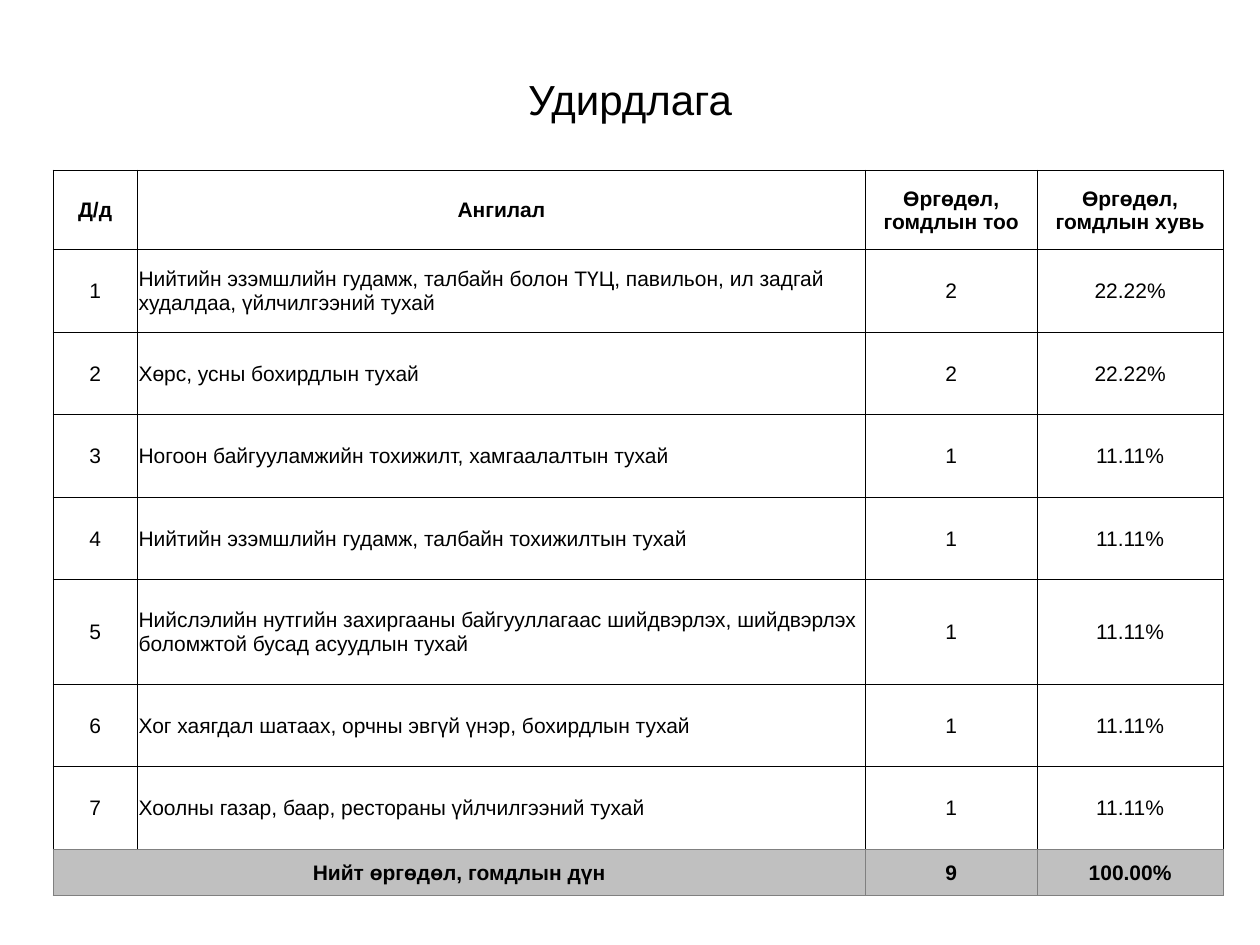
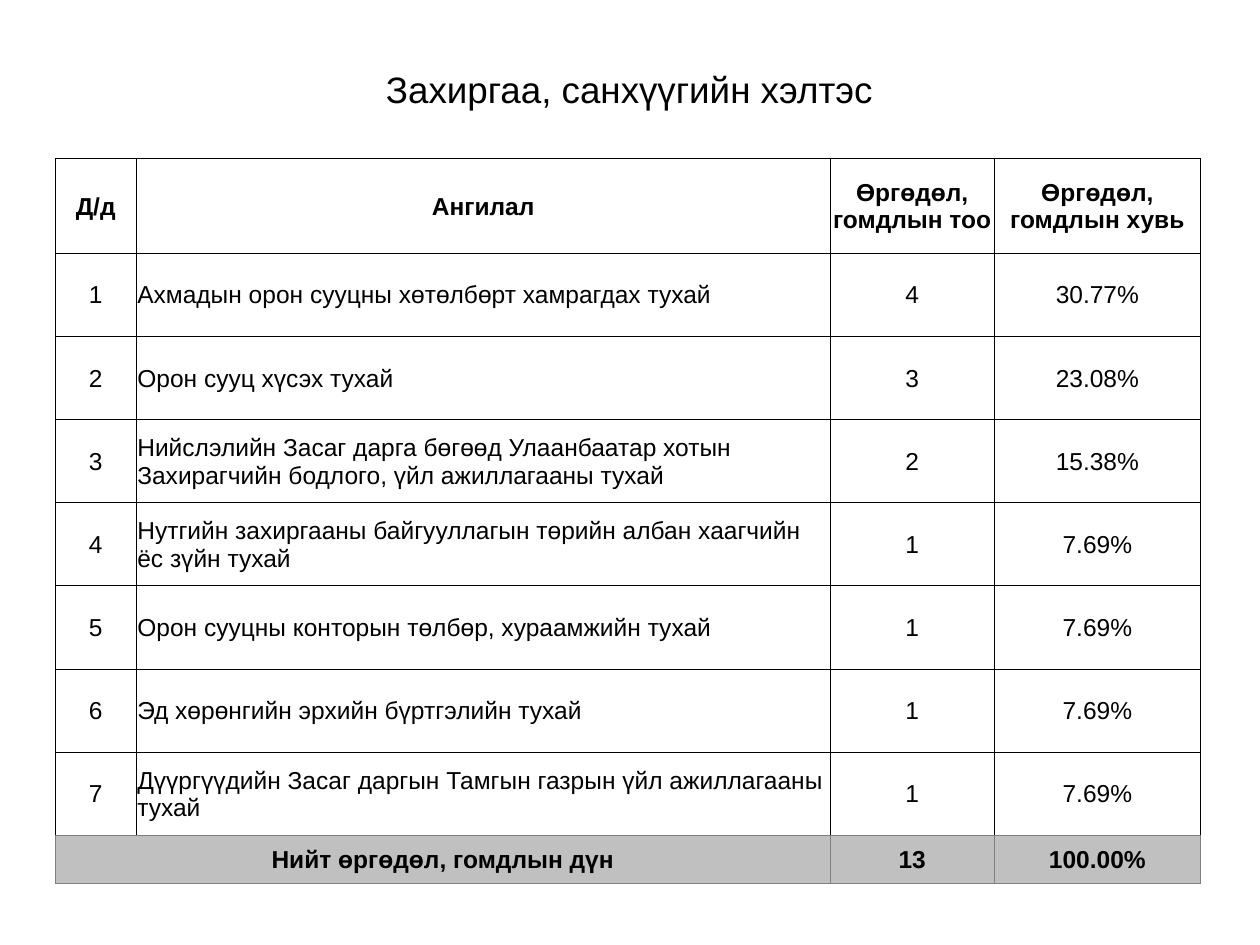
from lxml.etree import SubElement
from pptx import Presentation
from pptx.dml.color import RGBColor
from pptx.enum.text import MSO_ANCHOR, PP_ALIGN
from pptx.oxml.ns import qn
from pptx.util import Inches, Pt

BLACK = RGBColor(0x00, 0x00, 0x00)
WHITE = RGBColor(0xFF, 0xFF, 0xFF)
GREY = RGBColor(0x80, 0x80, 0x80)
SILVER = RGBColor(0xC0, 0xC0, 0xC0)
FONT = "Arial"
CELL_FORMAT = {
    "margin_left": Inches(0.01),
    "margin_top": Inches(0.01),
    "margin_right": Inches(0.01),
    "margin_bottom": 0,
    "vertical_anchor": MSO_ANCHOR.MIDDLE,
}
HEADERS = ("Д/д", "Ангилал", "Өргөдөл, гомдлын тоо", "Өргөдөл, гомдлын хувь")
TOTAL_LABEL = "Нийт өргөдөл, гомдлын дүн"

SLIDES = [
    {
        "title": "Удирдлага",
        "title_box": (0.69, 0.51, 8.62, 0.6),
        "title_size": 24,
        "table_box": (0.42, 1.35, 9.29, 5.77),
        "text_size": 12,
        "cols": (0.67, 5.78, 1.36, 1.48),
        "rows": (0.63, *[0.655] * 4, 0.83, *[0.655] * 2, 0.37),
        "complaints": [
            ("Нийтийн эзэмшлийн гудамж, талбайн болон ТҮЦ, павильон, ил задгай "
             "худалдаа, үйлчилгээний тухай", 2),
            ("Хөрс, усны бохирдлын тухай", 2),
            ("Ногоон байгууламжийн тохижилт, хамгаалалтын тухай", 1),
            ("Нийтийн эзэмшлийн гудамж, талбайн тохижилтын тухай", 1),
            ("Нийслэлийн нутгийн захиргааны байгууллагаас шийдвэрлэх, шийдвэрлэх "
             "боломжтой бусад асуудлын тухай", 1),
            ("Хог хаягдал шатаах, орчны эвгүй үнэр, бохирдлын тухай", 1),
            ("Хоолны газар, баар, рестораны үйлчилгээний тухай", 1),
        ],
    },
    {
        "title": "Захиргаа, санхүүгийн хэлтэс",
        "title_box": (0.21, 0.34, 9.57, 0.77),
        "title_size": 21,
        "table_box": (0.44, 1.26, 9.08, 5.74),
        "text_size": 14,
        "cols": (0.64, 5.51, 1.3, 1.64),
        "rows": (0.75, *[0.66] * 7, 0.38),
        "complaints": [
            ("Ахмадын орон сууцны хөтөлбөрт хамрагдах тухай", 4),
            ("Орон сууц хүсэх тухай", 3),
            ("Нийслэлийн Засаг дарга бөгөөд Улаанбаатар хотын Захирагчийн "
             "бодлого, үйл ажиллагааны тухай", 2),
            ("Нутгийн захиргааны байгууллагын төрийн албан хаагчийн ёс зүйн тухай", 1),
            ("Орон сууцны конторын төлбөр, хураамжийн тухай", 1),
            ("Эд хөрөнгийн эрхийн бүртгэлийн тухай", 1),
            ("Дүүргүүдийн Засаг даргын Тамгын газрын үйл ажиллагааны тухай", 1),
        ],
    },
]


def set_attrs(obj, values):
    """Set every attribute named in a dict of format values."""
    for name, value in values.items():
        setattr(obj, name, value)


def write(tf, text, size, bold=False, align=PP_ALIGN.CENTER):
    """Write one formatted paragraph and return it."""
    p = tf.paragraphs[0]
    p.alignment = align
    r = p.add_run()
    r.text = text
    set_attrs(r.font, {"name": FONT, "size": Pt(size), "bold": bold})
    r.font.color.rgb = BLACK
    return p


def add_title(s, box, text, size):
    """Add the centred slide title."""
    tf = s.shapes.add_textbox(*map(Inches, box)).text_frame
    set_attrs(tf, {"word_wrap": True, "vertical_anchor": MSO_ANCHOR.MIDDLE})
    write(tf, text, size).line_spacing = 0.9


def set_borders(cell, colors):
    """Draw half-point borders in the colours given for each side."""
    tc_pr = cell._tc.get_or_add_tcPr()
    for side, color in colors.items():
        ln = SubElement(tc_pr, qn(f"a:ln{side}"), w=str(Pt(0.5)))
        fill = SubElement(ln, qn("a:solidFill"))
        SubElement(fill, qn("a:srgbClr"), val=str(color))


def complaint_rows(complaints):
    """Return the header, numbered complaints and total as rows of text."""
    total = sum(count for _, count in complaints)
    body = [(str(i), name, str(count), f"{count / total:.2%}")
            for i, (name, count) in enumerate(complaints, 1)]
    return [HEADERS, *body, (TOTAL_LABEL, "", str(total), f"{1:.2%}")]


def add_complaint_table(s, box, cols, heights, complaints, size):
    """Add the table of complaints with its shaded total row."""
    rows = complaint_rows(complaints)
    last = len(rows) - 1
    table = s.shapes.add_table(len(rows), len(cols), *map(Inches, box)).table
    set_attrs(table, {"first_row": False, "horz_banding": False})
    for col, width in zip(table.columns, cols):
        col.width = Inches(width)
    for row, height in zip(table.rows, heights):
        row.height = Inches(height)
    table.cell(last, 0).merge(table.cell(last, 1))
    for i, texts in enumerate(rows):
        line = GREY if i == last else BLACK
        bottom = GREY if i >= last - 1 else BLACK
        for j, text in enumerate(texts):
            cell = table.cell(i, j)
            set_attrs(cell, CELL_FORMAT)
            set_borders(cell, {"L": line, "R": line, "T": line, "B": bottom})
            cell.fill.solid()
            cell.fill.fore_color.rgb = SILVER if i == last else WHITE
            if text:
                is_name = j == 1 and 0 < i < last
                write(cell.text_frame, text, size, i in (0, last),
                      PP_ALIGN.LEFT if is_name else PP_ALIGN.CENTER)


def add_complaint_slide(prs, data):
    """Add one slide with a title and its table of complaints."""
    s = prs.slides.add_slide(prs.slide_layouts[6])
    add_title(s, data["title_box"], data["title"], data["title_size"])
    add_complaint_table(s, data["table_box"], data["cols"], data["rows"],
                        data["complaints"], data["text_size"])


def main():
    """Build and save the presentation."""
    prs = Presentation()
    set_attrs(prs, {"slide_width": Inches(10), "slide_height": Inches(7.5)})
    for data in SLIDES:
        add_complaint_slide(prs, data)
    prs.save("out.pptx")


if __name__ == "__main__":
    main()
